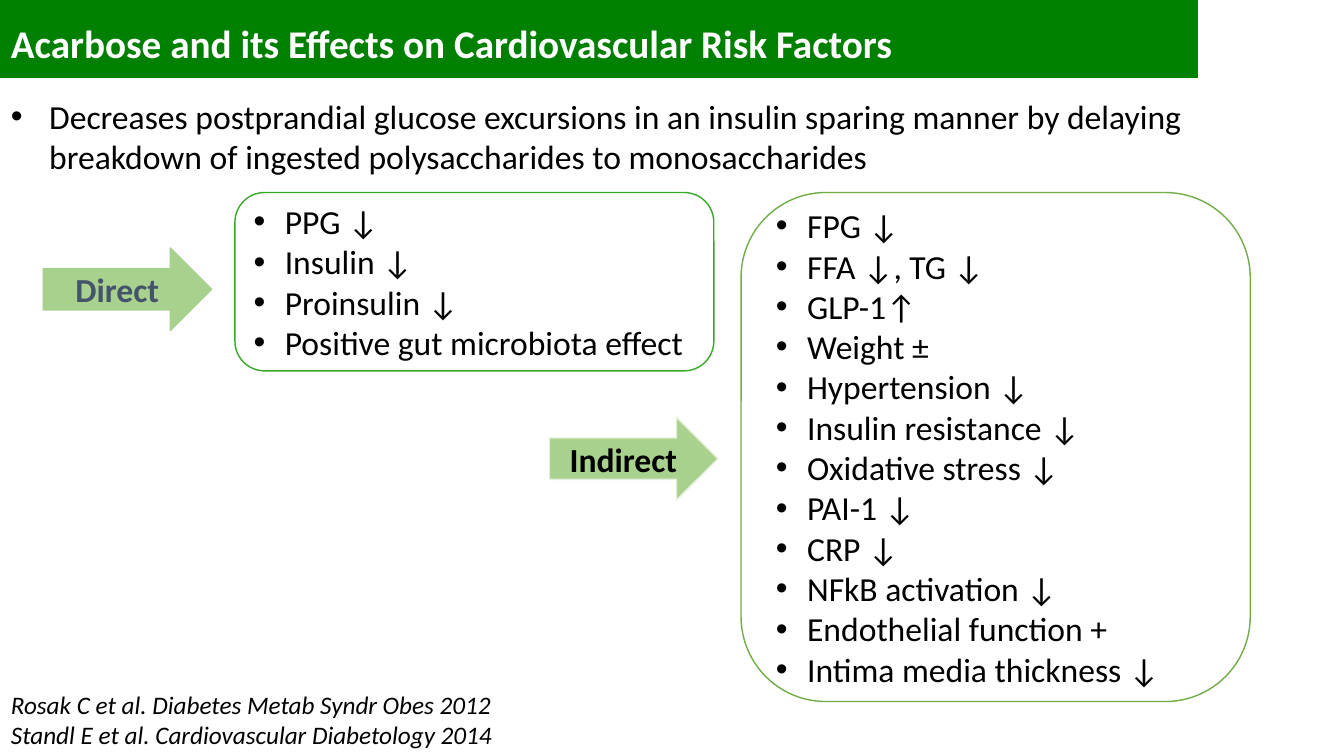
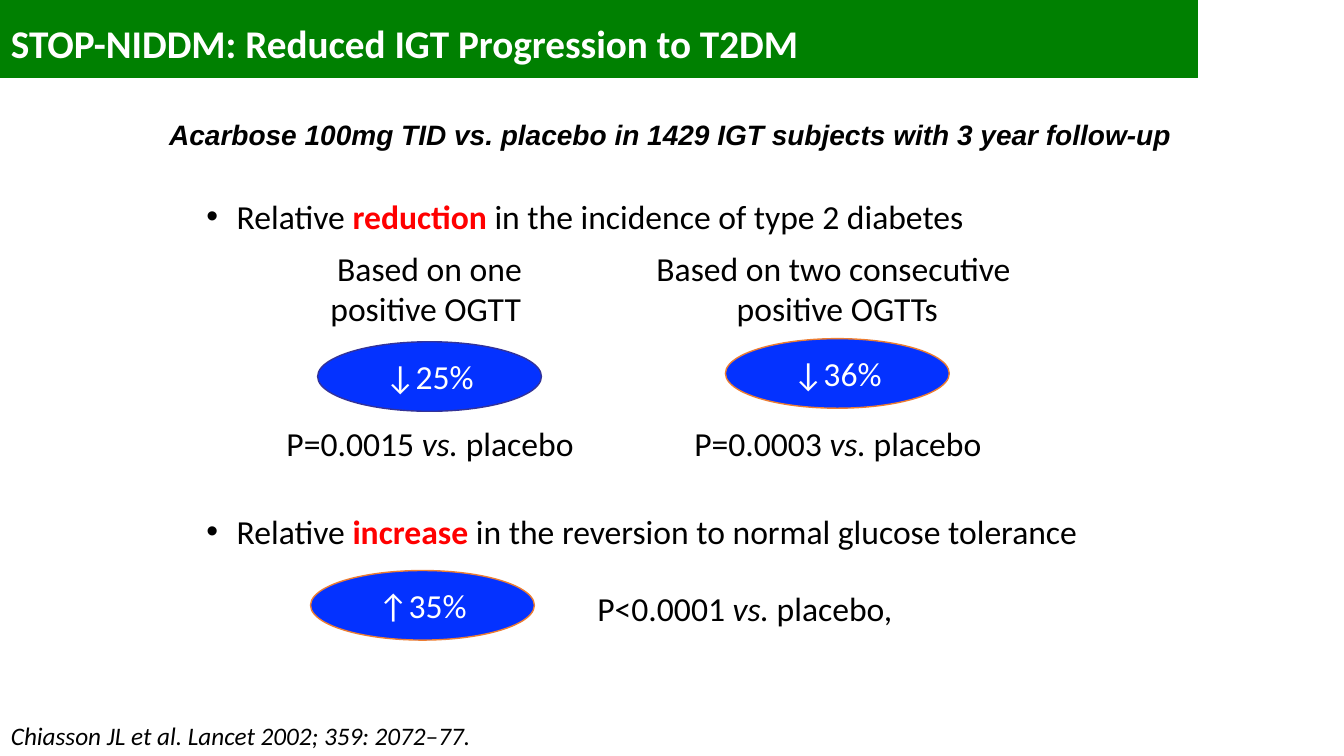
from lxml import etree
from pptx import Presentation
from pptx.dml.color import RGBColor
from pptx.enum import shapes as sh, text as tx
from pptx.oxml import ns
from pptx.util import Inches, Pt

GREEN = RGBColor(0x00, 0x80, 0x01)
LEAF = RGBColor(0xA9, 0xD1, 0x8E)
PALE = RGBColor(0xE2, 0xF0, 0xD9)
LIME = RGBColor(0x37, 0xA8, 0x28)
MOSS = RGBColor(0x70, 0xAD, 0x47)
SLATE = RGBColor(0x44, 0x54, 0x6A)
BLUE = RGBColor(0x04, 0x32, 0xFF)
NAVY = RGBColor(0x33, 0x33, 0x99)
AMBER = RGBColor(0xED, 0x7D, 0x31)
RED = RGBColor(0xFF, 0x00, 0x00)
BLACK = RGBColor(0, 0, 0)
WHITE = RGBColor(0xFF, 0xFF, 0xFF)

BODY = {"name": "Calibri", "size": Pt(24), "color": BLACK}
TITLE = {**BODY, "size": Pt(28), "color": WHITE, "bold": True}
CITE = {**BODY, "size": Pt(18), "italic": True}
INTRO = {**BODY, "name": "Arial", "size": Pt(20), "bold": True, "italic": True}
LIGHT = {**BODY, "color": WHITE}
KEY = {"color": RED, "bold": True}
SLANT = {"italic": True}

LEFT, MID = tx.PP_ALIGN.LEFT, tx.PP_ALIGN.CENTER
TOP, CORE = tx.MSO_ANCHOR.TOP, tx.MSO_ANCHOR.MIDDLE
KIND = sh.MSO_SHAPE


def style(font, form):
    for key, val in form.items():
        if key == "color":
            font.color.rgb = val
        else:
            setattr(font, key, val)


def bullet(para, dent):
    props = para._p.get_or_add_pPr()
    props.set("marL", str(Inches(dent)))
    props.set("indent", str(-Inches(dent)))
    face = etree.SubElement(props, ns.qn("a:buFont"))
    face.set("typeface", "Arial")
    etree.SubElement(props, ns.qn("a:buChar")).set("char", "•")


def write(shape, lines, form=BODY, align=LEFT, anchor=TOP, dent=0):
    """Each line is a string or a list of (text, format) runs."""
    frame = shape.text_frame
    frame.word_wrap = True
    frame.vertical_anchor = anchor
    for num, line in enumerate(lines):
        para = frame.add_paragraph() if num else frame.paragraphs[0]
        para.alignment = align
        if dent:
            bullet(para, dent)
        for words, extra in [(line, {})] if isinstance(line, str) else line:
            run = para.add_run()
            run.text = words
            style(run.font, {**form, **extra})


def label(slide, box, lines, **opts):
    write(slide.shapes.add_textbox(*map(Inches, box)), lines, **opts)


def block(slide, kind, box, fill, edge):
    shape = slide.shapes.add_shape(kind, *map(Inches, box))
    shape.shadow.inherit = False
    if fill is None:
        shape.fill.background()
    else:
        shape.fill.solid()
        shape.fill.fore_color.rgb = fill
    shape.line.color.rgb = edge
    shape.line.width = Pt(1)
    return shape


def start(deck, title, cites, top):
    """Slide with the title band and the citations at the foot."""
    slide = deck.slides.add_slide(deck.slide_layouts[6])
    block(slide, KIND.RECTANGLE, (0, 0, 11.88, 0.77), GREEN, GREEN)
    label(slide, (0.01, 0.14, 13.32, 0.57), [title], form=TITLE, anchor=CORE)
    label(slide, (0.01, top, 5.5, 7.5 - top), cites, form=CITE)
    return slide


def group(slide, box, name, ink, rim, edge, drop, items):
    """Outlined list with a named arrow on its left."""
    left, top, wide, high = box
    arrow = block(slide, KIND.RIGHT_ARROW,
                  (left - 1.9, top + drop, 1.67, 0.82), LEAF, rim)
    # Side insets would break the longer name
    arrow.text_frame.margin_left = arrow.text_frame.margin_right = 0
    write(arrow, [name], {**BODY, "color": ink, "bold": True}, MID, CORE)
    panel = block(slide, KIND.ROUNDED_RECTANGLE, box, None, edge)
    write(panel, items, anchor=CORE, dent=0.31)


def oval(slide, left, top, value, edge):
    shape = block(slide, KIND.OVAL, (left, top, 2.22, 0.69), BLUE, edge)
    write(shape, [value], LIGHT, MID, CORE)


def odds(slide, box, value, tail="placebo"):
    line = [(value + " ", {}), ("vs. ", SLANT), (tail, {})]
    label(slide, box, [line], align=MID)


def claim(slide, top, word, rest):
    line = [("Relative ", {}), (word + " ", KEY), (rest, {})]
    label(slide, (1.95, top, 9.9, 0.5), [line], dent=0.3)


def result(slide, box, basis, value, edge, chance, lift):
    """Column: basis, oval with the change, P value."""
    left, top, wide = box
    mid = left + wide / 2
    label(slide, (left, top, wide, 0.91), basis, align=MID)
    oval(slide, mid - 1.11, top + lift, value, edge)
    odds(slide, (mid - 1.72, top + 1.74, 3.45, 0.5), chance)


def effects(deck):
    slide = start(deck, "Acarbose and its Effects on Cardiovascular Risk Factors",
                  ["Rosak C et al. Diabetes Metab Syndr Obes 2012",
                   "Standl E et al. Cardiovascular Diabetology 2014"], 6.79)
    label(slide, (0.01, 0.9, 12.3, 0.91),
          ["Decreases postprandial glucose excursions in an insulin sparing "
           "manner by delaying breakdown of ingested polysaccharides to "
           "monosaccharides"], dent=0.38)
    group(slide, (2.33, 1.91, 4.75, 1.77), "Direct", SLATE, LEAF, LIME, 0.55,
          ["PPG ↓", "Insulin ↓", "Proinsulin ↓",
           "Positive gut microbiota effect"])
    group(slide, (7.35, 1.91, 5.05, 5.05), "Indirect", BLACK, PALE, MOSS, 2.23,
          ["FPG ↓", "FFA ↓, TG ↓", "GLP-1↑", "Weight ±", "Hypertension ↓",
           "Insulin resistance ↓", "Oxidative stress ↓", "PAI-1 ↓", "CRP ↓",
           "NFkB activation ↓", "Endothelial function +",
           "Intima media thickness ↓"])


def trial(deck):
    slide = start(deck, "STOP-NIDDM: Reduced IGT Progression to T2DM",
                  ["Chiasson JL et al. Lancet 2002; 359: 2072–77."], 7.1)
    label(slide, (0.06, 1.12, 13.18, 0.44),
          ["Acarbose 100mg TID vs. placebo in 1429 IGT subjects "
           "with 3 year follow-up"], form=INTRO, align=MID)
    # Fewer new cases
    claim(slide, 1.89, "reduction", "in the incidence of type 2 diabetes")
    result(slide, (2.94, 2.41, 2.64), ["Based on one", "positive OGTT "],
           "↓25%", NAVY, "P=0.0015", 0.98)
    result(slide, (6.14, 2.41, 4.33),
           ["Based on two consecutive ", "positive OGTTs"],
           "↓36%", AMBER, "P=0.0003", 0.95)
    # More reversions
    claim(slide, 5.02, "increase", "in the reversion to normal glucose tolerance")
    oval(slide, 3.08, 5.66, "↑35%", AMBER)
    odds(slide, (5.19, 5.78, 4.47, 0.5), "P<0.0001", "placebo, ")


def main():
    deck = Presentation()
    deck.slide_width, deck.slide_height = Inches(13.33), Inches(7.5)
    effects(deck)
    trial(deck)
    deck.save("out.pptx")


if __name__ == "__main__":
    main()
